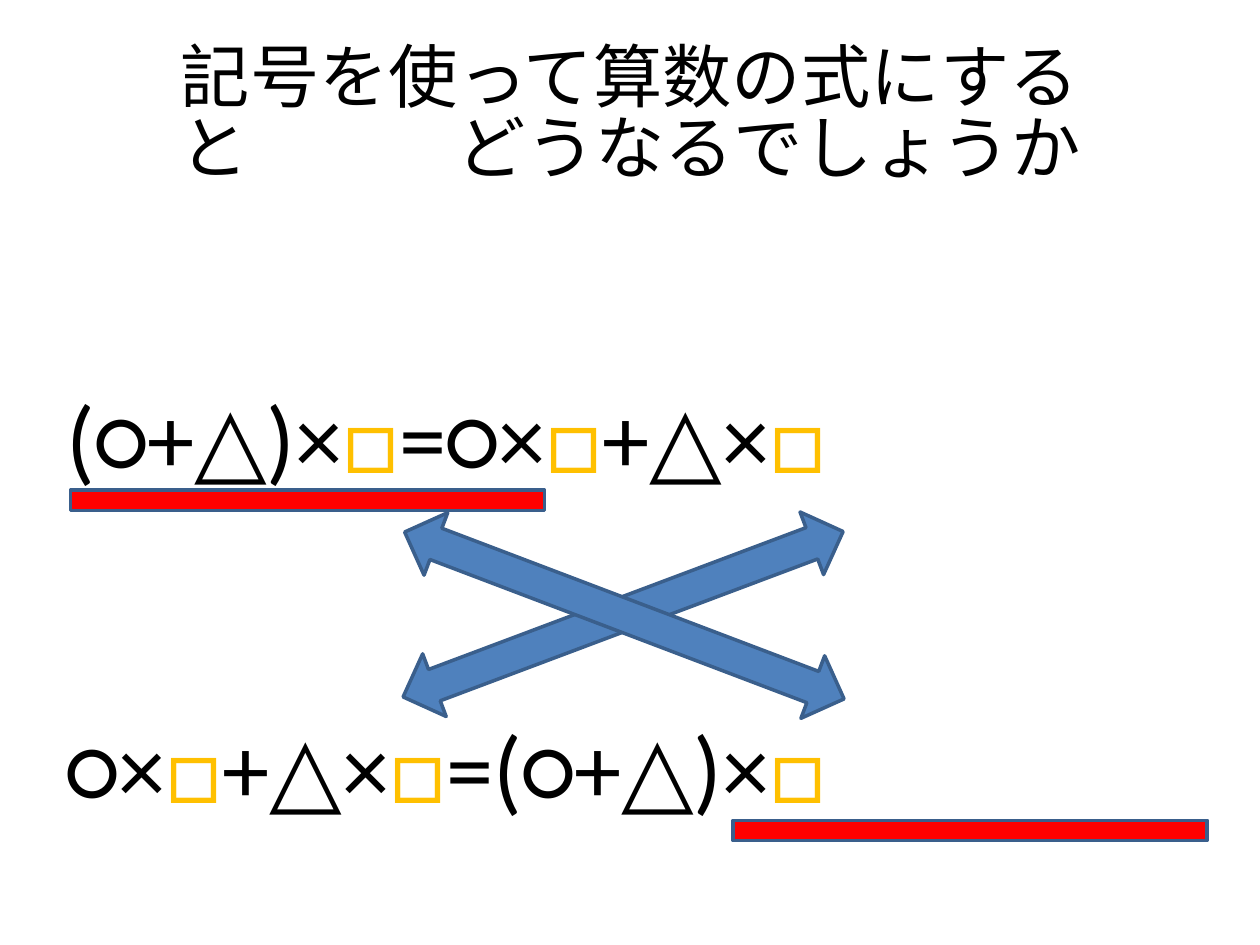
from dataclasses import dataclass

from pptx import Presentation
from pptx.dml.color import RGBColor
from pptx.enum import shapes, text
from pptx.util import Pt

COLORS = {"ink": "000000", "square": "FFC000", "arrow": "4F81BD",
          "bar": "FF0000", "outline": "3A5F8C"}
FONT = "Calibri"
SQUARE = "□"


@dataclass
class Equation:
    top: float
    content: str


@dataclass
class Mark:
    preset: shapes.MSO_SHAPE
    left: float
    top: float
    width: float
    height: float
    fill: str
    rotation: float = 0


def rgb(name: str) -> RGBColor:
    return RGBColor.from_string(COLORS[name])


def add_run(p, content: str, size: float, color: str = "ink") -> None:
    r = p.add_run()
    r.text = content
    for name, value in {"name": FONT, "size": Pt(size)}.items():
        setattr(r.font, name, value)
    r.font.color.rgb = rgb(color)


def add_equation(slide, eq: Equation) -> None:
    sp = slide.shapes.add_textbox(Pt(31), Pt(eq.top), Pt(674.6), Pt(72.7))
    tf = sp.text_frame
    tf.word_wrap = False
    tf.auto_size = text.MSO_AUTO_SIZE.SHAPE_TO_FIT_TEXT
    p = tf.paragraphs[0]
    # Every square closes a group of plain symbols
    for group in eq.content.split(SQUARE)[:-1]:
        add_run(p, group, 54)
        add_run(p, SQUARE, 54, "square")


def add_mark(slide, mark: Mark) -> None:
    sp = slide.shapes.add_shape(mark.preset, Pt(mark.left), Pt(mark.top),
                                Pt(mark.width), Pt(mark.height))
    sp.rotation = mark.rotation
    sp.shadow.inherit = False
    sp.fill.solid()
    sp.fill.fore_color.rgb = rgb(mark.fill)
    sp.line.color.rgb = rgb("outline")
    sp.line.width = Pt(2)


def add_title(slide, content: str) -> None:
    sp = slide.shapes.title
    box = {"left": 36, "top": 21.6, "width": 648, "height": 90}
    for name, value in box.items():
        setattr(sp, name, Pt(value))
    tf = sp.text_frame
    tf.auto_size = text.MSO_AUTO_SIZE.NONE
    tf.vertical_anchor = text.MSO_ANCHOR.MIDDLE
    p = tf.paragraphs[0]
    p.alignment = text.PP_ALIGN.CENTER
    p.line_spacing = 0.85
    add_run(p, content, 39.6)


ARROW = shapes.MSO_SHAPE.LEFT_RIGHT_ARROW
MINUS = shapes.MSO_SHAPE.MATH_MINUS
EQUATIONS = [
    Equation(213.1, "(○+△)×□=○×□+△×□"),
    Equation(401.8, "○×□+△×□=(○+△)×□"),
]
MARKS = [
    # Crossing arrows
    Mark(ARROW, 221.8, 331.9, 268.6, 38.2, "arrow", 339.4),
    Mark(ARROW, 222.5, 332.6, 268.6, 38.2, "arrow", 20.8),
    # Underlines
    Mark(MINUS, -8.6, 261.4, 368.6, 49, "bar"),
    Mark(MINUS, 370.1, 450, 368.6, 49, "bar"),
]


def main() -> None:
    prs = Presentation()
    prs.slide_width, prs.slide_height = Pt(720), Pt(540)
    slide = prs.slides.add_slide(prs.slide_layouts[5])
    add_title(slide, "記号を使って算数の式にすると　　　どうなるでしょうか")
    for eq in EQUATIONS:
        add_equation(slide, eq)
    for mark in MARKS:
        add_mark(slide, mark)
    prs.save("out.pptx")


if __name__ == "__main__":
    main()
